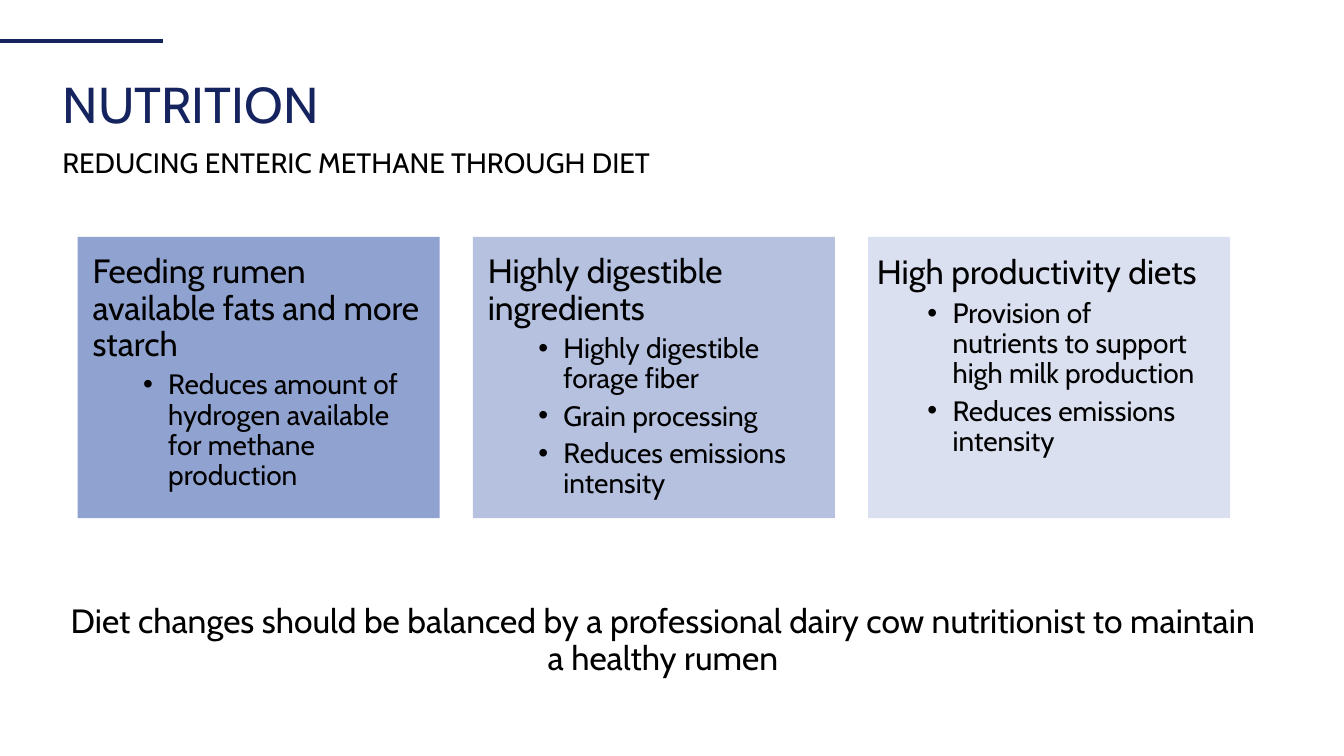
from dataclasses import dataclass

from lxml.etree import SubElement
from pptx import Presentation
from pptx.dml.color import RGBColor
from pptx.enum.shapes import MSO_CONNECTOR as Connector, MSO_SHAPE as Preset
from pptx.enum.text import MSO_ANCHOR as Anchor, MSO_AUTO_SIZE as AutoSize, PP_ALIGN as Align
from pptx.oxml.ns import qn
from pptx.slide import Slide
from pptx.text.text import TextFrame
from pptx.util import Emu, Pt

EMU_PER_PX = 9144  # 100 px to the inch
FONT = "Cabin"
NAVY = RGBColor(0x15, 0x23, 0x5F)
BLACK = RGBColor(0x00, 0x00, 0x00)
DEEP_BLUE = RGBColor(0x90, 0xA2, 0xCF)
MID_BLUE = RGBColor(0xB5, 0xC1, 0xDF)
PALE_BLUE = RGBColor(0xDA, 0xE0, 0xEF)

CARD_LEFT, CARD_TOP, CARD_WIDTH, CARD_HEIGHT = 77, 235, 359, 279
CARD_PITCH = 392


@dataclass(frozen=True)
class Box:
    left: int
    top: int
    width: int
    height: int

    def emu(self) -> tuple[Emu, Emu, Emu, Emu]:
        return px(self.left), px(self.top), px(self.width), px(self.height)


@dataclass(frozen=True)
class Card:
    heading: str
    bullets: tuple[str, ...]
    fill: RGBColor
    text_inset: int = 5
    text_drop: int = 13
    text_width: int = 349


CARDS = (
    Card("Feeding rumen available fats and more starch",
         ("Reduces amount of hydrogen available for methane production",),
         DEEP_BLUE),
    Card("Highly digestible ingredients",
         ("Highly digestible forage fiber", "Grain processing",
          "Reduces emissions intensity"),
         MID_BLUE),
    Card("High productivity diets",
         ("Provision of nutrients to support high milk production",
          "Reduces emissions intensity"),
         PALE_BLUE, text_inset=-1, text_drop=14, text_width=340),
)


def px(value: int) -> Emu:
    return Emu(value * EMU_PER_PX)


def write(frame: TextFrame, text: str, *, size: int, color: RGBColor = BLACK,
          align: Align = Align.LEFT, line_spacing: float = 0.9,
          space_before: int = 0, bullet: bool = False) -> None:
    """Fill the first paragraph of an empty frame, or add a new one."""
    paragraph = frame.add_paragraph() if frame.text else frame.paragraphs[0]
    if bullet:
        paragraph.level = 1
        properties = paragraph._p.get_or_add_pPr()
        properties.set("marL", str(px(75)))
        properties.set("indent", str(px(-25)))
        SubElement(properties, qn("a:buFont"), typeface="Arial")
        SubElement(properties, qn("a:buChar"), char="•")
    paragraph.alignment = align
    paragraph.line_spacing = line_spacing
    paragraph.space_before = Pt(space_before)
    run = paragraph.add_run()
    run.text = text
    run.font.name = FONT
    run.font.size = Pt(size)
    run.font.color.rgb = color


def add_text_box(slide: Slide, box: Box) -> TextFrame:
    frame = slide.shapes.add_textbox(*box.emu()).text_frame
    frame.word_wrap = True
    return frame


def add_accent_line(slide: Slide) -> None:
    line = slide.shapes.add_connector(Connector.STRAIGHT, px(0), px(41), px(162), px(41))
    line.line.color.rgb = NAVY
    line.line.width = Pt(3)
    SubElement(line._element.spPr, qn("a:effectLst"))


def add_title(slide: Slide, text: str, box: Box) -> None:
    title = slide.shapes.title
    title.left, title.top, title.width, title.height = box.emu()
    frame = title.text_frame
    frame.auto_size = AutoSize.NONE
    frame.vertical_anchor = Anchor.MIDDLE
    write(frame, text, size=36, color=NAVY)


def add_card(slide: Slide, card: Card, left: int) -> None:
    panel = Box(left, CARD_TOP, CARD_WIDTH, CARD_HEIGHT)
    shape = slide.shapes.add_shape(Preset.RECTANGLE, *panel.emu())
    shape.shadow.inherit = False
    shape.fill.solid()
    shape.fill.fore_color.rgb = card.fill
    shape.line.fill.background()

    frame = add_text_box(slide, Box(left + card.text_inset, CARD_TOP + card.text_drop,
                                    card.text_width, 266))
    write(frame, card.heading, size=24)
    for bullet in card.bullets:
        write(frame, bullet, size=20, space_before=5, bullet=True)


def main() -> None:
    presentation = Presentation()
    presentation.slide_width, presentation.slide_height = px(1333), px(750)
    slide = presentation.slides.add_slide(presentation.slide_layouts[5])

    # Heading
    add_accent_line(slide)
    add_title(slide, "NUTRITION", Box(52, 73, 1223, 66))
    subtitle = add_text_box(slide, Box(52, 139, 643, 44))
    write(subtitle, "REDUCING ENTERIC METHANE THROUGH DIET", size=20, line_spacing=1.0)

    # Diet strategies
    for index, card in enumerate(CARDS):
        add_card(slide, card, CARD_LEFT + index * CARD_PITCH)

    # Closing advice
    advice = add_text_box(slide, Box(51, 595, 1213, 93))
    write(advice, "Diet changes should be balanced by a professional dairy cow "
          "nutritionist to maintain a healthy rumen", size=24, align=Align.CENTER)

    presentation.save("out.pptx")


if __name__ == "__main__":
    main()
